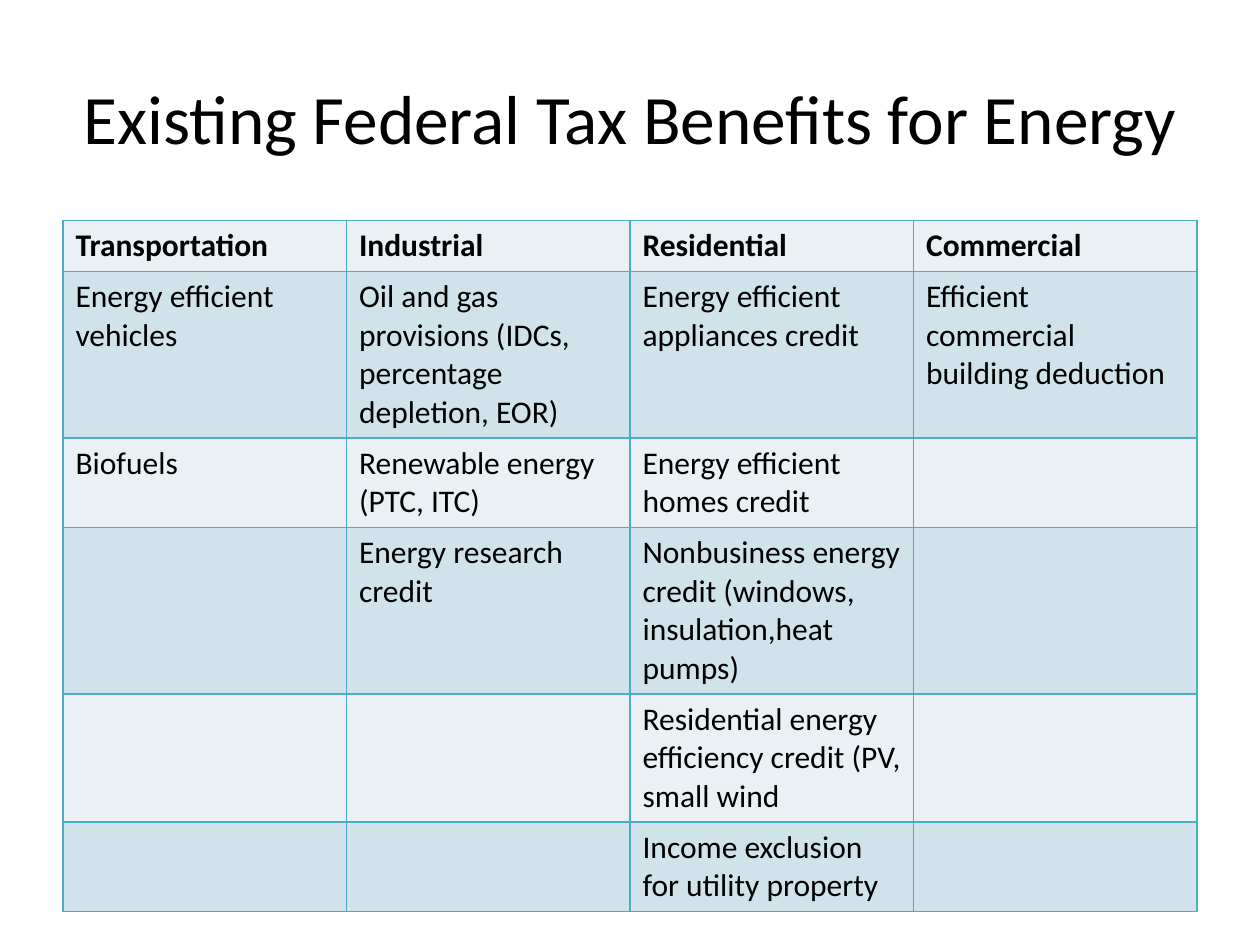
from pptx import Presentation
from pptx.dml.color import RGBColor
from pptx.enum.text import MSO_ANCHOR, PP_ALIGN
from pptx.oxml import parse_xml
from pptx.oxml.ns import nsdecls
from pptx.util import Pt

CENTER = PP_ALIGN.CENTER
MIDDLE = MSO_ANCHOR.MIDDLE

FONT = "Calibri"
INK = "000000"
LINE = "4BACC6"
BANDS = ("E9F1F5", "D0E3EA")
COL, ROW = 162, 29.2

BENEFITS = [
    ("Transportation", "Industrial", "Residential", "Commercial"),
    ("Energy efficient vehicles",
     "Oil and gas provisions (IDCs, percentage depletion, EOR)",
     "Energy efficient appliances credit",
     "Efficient commercial building deduction"),
    ("Biofuels", "Renewable energy (PTC, ITC)",
     "Energy efficient homes credit", ""),
    ("", "Energy research credit",
     "Nonbusiness energy credit (windows, insulation,heat pumps)", ""),
    ("", "", "Residential energy efficiency credit (PV, small wind", ""),
    ("", "", "Income exclusion for utility property", ""),
]


def color(code):
    return RGBColor.from_string(code)


class Deck:
    """Holds the text style and the current slide."""

    def __init__(self):
        self.prs = Presentation()
        self.prs.slide_width, self.prs.slide_height = Pt(720), Pt(540)
        self.slide = self.prs.slides.add_slide(self.prs.slide_layouts[5])

    def style(self, para, size, bold=False):
        font = para.font
        font.name, font.size, font.bold = FONT, Pt(size), bold
        font.color.rgb = color(INK)

    def title(self, text, left, top, width, height):
        shape = self.slide.shapes.title
        shape.left, shape.top = Pt(left), Pt(top)
        shape.width, shape.height = Pt(width), Pt(height)
        frame = shape.text_frame
        frame.text = text
        frame.vertical_anchor = MIDDLE
        para = frame.paragraphs[0]
        para.alignment = CENTER
        self.style(para, 39.6)

    def border(self, cell):
        """Draw a thin line on all four sides of the cell."""
        props = cell._tc.get_or_add_tcPr()
        for spot, side in enumerate(("lnL", "lnR", "lnT", "lnB")):
            props.insert(spot, parse_xml(
                f'<a:{side} {nsdecls("a")} w="{Pt(1)}"><a:solidFill>'
                f'<a:srgbClr val="{LINE}"/></a:solidFill></a:{side}>'))

    def table(self, rows, left, top):
        count, wide = len(rows), len(rows[0])
        grid = self.slide.shapes.add_table(
            count, wide, Pt(left), Pt(top),
            Pt(COL * wide), Pt(ROW * count)).table
        grid.first_row = grid.horz_banding = False
        for r, row in enumerate(rows):
            for c, text in enumerate(row):
                cell = grid.cell(r, c)
                cell.text = text
                cell.fill.solid()
                cell.fill.fore_color.rgb = color(BANDS[r % 2])
                self.style(cell.text_frame.paragraphs[0], 18, bold=r == 0)
                self.border(cell)


def main():
    deck = Deck()
    deck.title("Existing Federal Tax Benefits for Energy", 36, 21.6, 648, 90)
    deck.table(BENEFITS, 36, 126)
    deck.prs.save("out.pptx")


if __name__ == "__main__":
    main()
